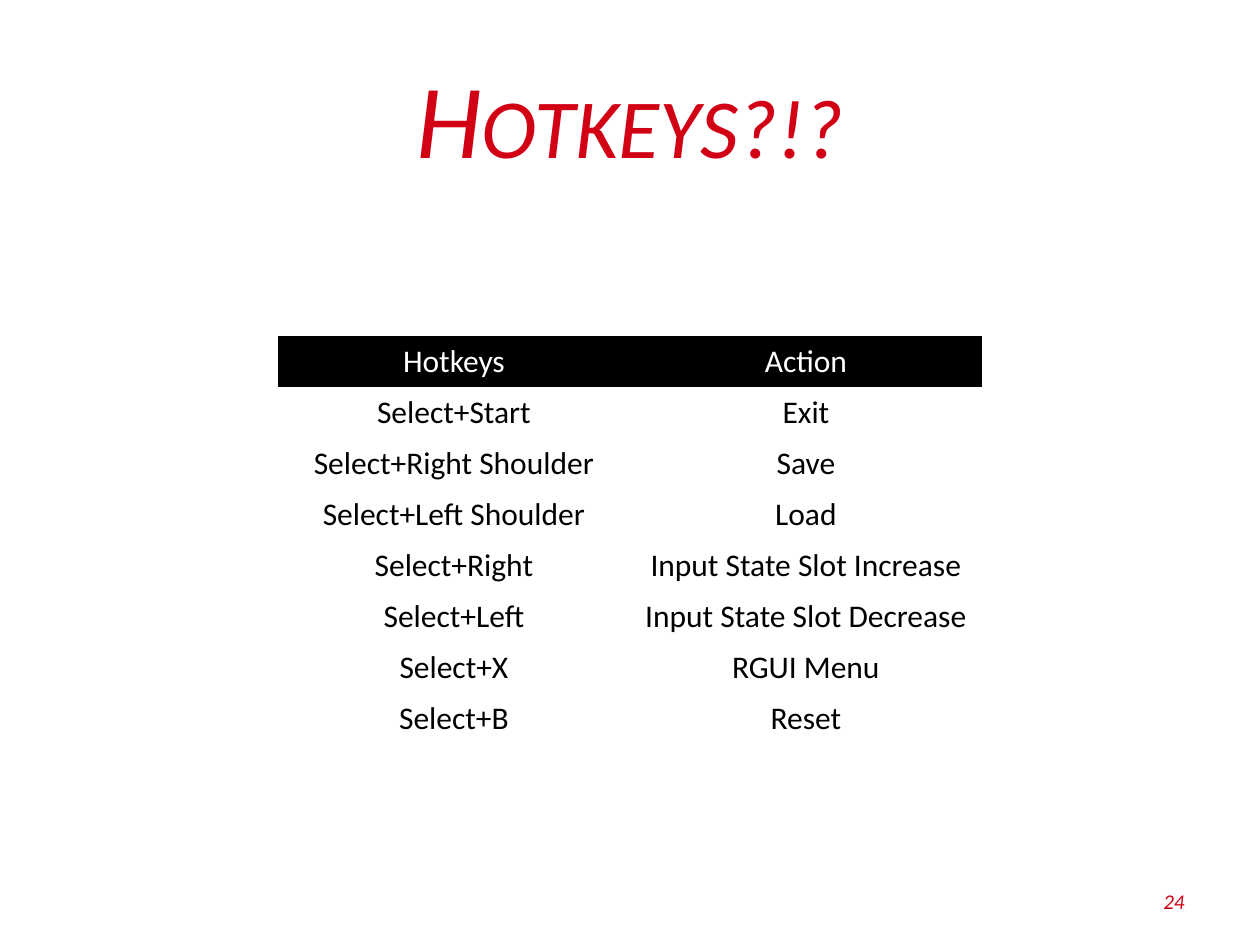
import pptx
import pptx.dml.color
import pptx.enum.text
import pptx.oxml.ns
import pptx.util

COLORS = {"red": "D20014", "black": "000000", "white": "FFFFFF"}
ALIGN = pptx.enum.text.PP_ALIGN
MIDDLE = pptx.enum.text.MSO_ANCHOR.MIDDLE
PLAIN = "{2D5ABB26-0587-4C30-8999-92F81FD0307C}"  # no style, no grid

ROWS = [
    ("Hotkeys", "Action"),
    ("Select+Start", "Exit"),
    ("Select+Right Shoulder", "Save"),
    ("Select+Left Shoulder", "Load"),
    ("Select+Right", "Input State Slot Increase"),
    ("Select+Left", "Input State Slot Decrease"),
    ("Select+X", "RGUI Menu"),
    ("Select+B", "Reset"),
]
TITLE = {"text": "Hotkeys?!?", "box": (63, 38, 1134, 157),
         "align": ALIGN.CENTER, "size": 60}
NUMBER = {"text": "24", "box": (903, 876, 294, 50),
          "align": ALIGN.RIGHT, "size": 12}
LEFT, TOP, COL, ROW = 278, 336, 352, 51


def px(n):
    """Turn pixels into EMU at 126 pixels to the inch."""
    return pptx.util.Emu(round(n * 914400 / 126))


def rgb(name):
    return pptx.dml.color.RGBColor.from_string(COLORS[name])


def write(frame, text, align, size, color, italic=False):
    para = frame.paragraphs[0]
    para.alignment = align
    run = para.add_run()
    run.text = text
    look = {"name": "Calibri", "size": pptx.util.Pt(size),
            "bold": False, "italic": italic}
    for key, value in look.items():
        setattr(run.font, key, value)
    run.font.color.rgb = rgb(color)
    return run


def label(slide, text, box, align, size):
    frame = slide.shapes.add_textbox(*map(px, box)).text_frame
    frame.word_wrap = True
    frame.vertical_anchor = MIDDLE
    return write(frame, text, align, size, "red", italic=True)


def grid(slide):
    cols = len(ROWS[0])
    frame = slide.shapes.add_table(
        len(ROWS), cols, px(LEFT), px(TOP), px(COL * cols), px(ROW * len(ROWS)))
    style = frame.element.find(".//" + pptx.oxml.ns.qn("a:tableStyleId"))
    style.text = PLAIN
    table = frame.table
    table.first_row = table.horz_banding = False
    for r, row in enumerate(ROWS):
        for c, text in enumerate(row):
            cell = table.cell(r, c)
            if r == 0:
                cell.fill.solid()
                cell.fill.fore_color.rgb = rgb("black")
            else:
                cell.fill.background()
            write(cell.text_frame, text, ALIGN.CENTER, 18,
                  "black" if r else "white")


def main():
    deck = pptx.Presentation()
    deck.slide_width, deck.slide_height = px(1260), px(945)
    slide = deck.slides.add_slide(deck.slide_layouts[6])
    label(slide, **NUMBER)
    grid(slide)
    title = label(slide, **TITLE)
    title._r.get_or_add_rPr().set("cap", "small")
    deck.save("out.pptx")


if __name__ == "__main__":
    main()
